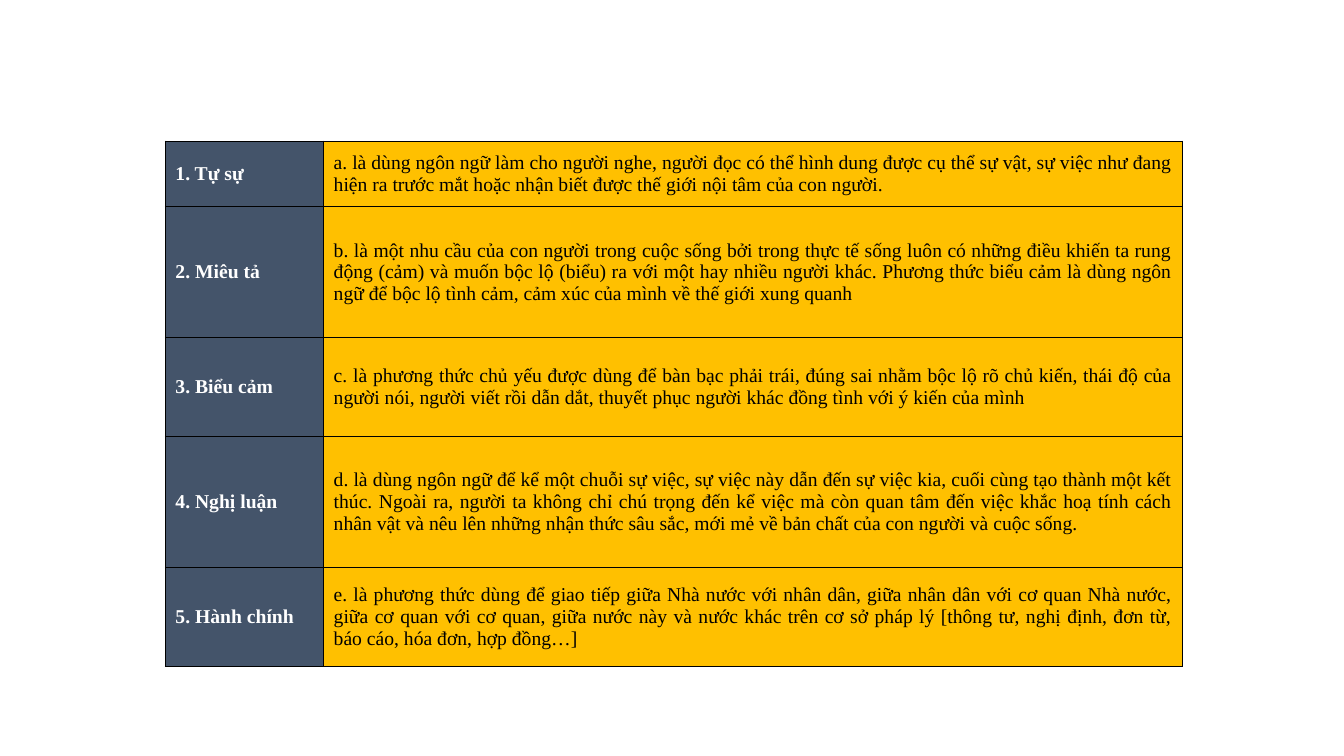
from lxml import etree
from pptx import Presentation
from pptx.dml.color import RGBColor
from pptx.enum.text import MSO_ANCHOR, PP_ALIGN
from pptx.oxml.ns import qn
from pptx.util import Inches, Pt

MIDDLE = MSO_ANCHOR.MIDDLE
LEFT, JUSTIFY = PP_ALIGN.LEFT, PP_ALIGN.JUSTIFY

# Mode of expression, definition, row height, space after the definition
MODES = [
    ("1. Tự sự",
     "a. là dùng ngôn ngữ làm cho người nghe, người đọc có thể hình dung được cụ thể sự vật, "
     "sự việc như đang hiện ra trước mắt hoặc nhận biết được thế giới nội tâm của con người.",
     0.65, 16),
    ("2. Miêu tả",
     "b. là một nhu cầu của con người trong cuộc sống bởi trong thực tế sống luôn có những điều "
     "khiến ta rung động (cảm) và muốn bộc lộ (biểu) ra với một hay nhiều người khác. "
     "Phương thức biểu cảm là dùng ngôn ngữ để bộc lộ tình cảm, cảm xúc của mình về thế giới "
     "xung quanh",
     1.3, 16),
    ("3. Biểu cảm",
     "c. là phương thức chủ yếu được dùng để bàn bạc phải trái, đúng sai nhằm bộc lộ rõ chủ kiến, "
     "thái độ của người nói, người viết rồi dẫn dắt, thuyết phục người khác đồng tình với "
     "ý kiến của mình",
     0.98, 16),
    ("4. Nghị luận",
     "d. là dùng ngôn ngữ để kể một chuỗi sự việc, sự việc này dẫn đến sự việc kia, cuối cùng "
     "tạo thành một kết thúc. Ngoài ra, người ta không chỉ chú trọng đến kể việc mà còn quan tâm "
     "đến việc khắc hoạ tính cách nhân vật và nêu lên những nhận thức sâu sắc, mới mẻ về bản chất "
     "của con người và cuộc sống.",
     1.3, 16),
    ("5. Hành chính",
     "e. là phương thức dùng để giao tiếp giữa Nhà nước với nhân dân, giữa nhân dân với cơ quan "
     "Nhà nước, giữa cơ quan với cơ quan, giữa nước này và nước khác trên cơ sở pháp lý "
     "[thông tư, nghị định, đơn từ, báo cáo, hóa đơn, hợp đồng…]",
     0.98, 0),
]

COLORS = {"slate": "44546A", "amber": "FFC000", "white": "FFFFFF", "black": "000000"}
TABLE_LEFT, TABLE_TOP = 1.64, 1.4
COLUMN_WIDTHS = (1.57, 8.52)
BORDER_WIDTH = Pt(0.75)
CELL_FORMAT = {
    "vertical_anchor": MIDDLE,
    "margin_left": Inches(0.1),
    "margin_right": Inches(0.1),
    "margin_top": 0,
    "margin_bottom": 0,
}
FONT_FORMAT = {"name": "Times New Roman", "size": Pt(14)}
MODE_STYLE = {"fill": "slate", "color": "white", "bold": True, "align": LEFT}
DEFINITION_STYLE = {"fill": "amber", "color": "black", "bold": False, "align": JUSTIFY}


def rgb(color):
    return RGBColor.from_string(COLORS[color])


def add_borders(cell):
    """Draw all four sides; the lines must precede the fill in the cell properties."""
    properties = cell._tc.get_or_add_tcPr()
    for position, side in enumerate(("a:lnL", "a:lnR", "a:lnT", "a:lnB")):
        line = etree.Element(qn(side), w=str(BORDER_WIDTH))
        fill = etree.SubElement(line, qn("a:solidFill"))
        etree.SubElement(fill, qn("a:srgbClr"), val=COLORS["black"])
        properties.insert(position, line)


def fill_cell(cell, text, style, space_after):
    for name, value in CELL_FORMAT.items():
        setattr(cell, name, value)
    cell.fill.solid()
    cell.fill.fore_color.rgb = rgb(style["fill"])
    add_borders(cell)
    paragraph = cell.text_frame.paragraphs[0]
    paragraph.alignment = style["align"]
    paragraph.space_after = Pt(space_after)
    run = paragraph.add_run()
    run.text = text
    for name, value in FONT_FORMAT.items():
        setattr(run.font, name, value)
    run.font.bold = style["bold"]
    run.font.color.rgb = rgb(style["color"])


def main():
    deck = Presentation()
    deck.slide_width, deck.slide_height = Inches(13.33), Inches(7.5)
    slide = deck.slides.add_slide(deck.slide_layouts[6])

    table_height = sum(height for _, _, height, _ in MODES)
    table = slide.shapes.add_table(
        len(MODES), len(COLUMN_WIDTHS), Inches(TABLE_LEFT), Inches(TABLE_TOP),
        Inches(sum(COLUMN_WIDTHS)), Inches(table_height)).table
    table.first_row = table.horz_banding = False
    for column, width in zip(table.columns, COLUMN_WIDTHS):
        column.width = Inches(width)

    for row, (mode, definition, height, space_after) in zip(table.rows, MODES):
        row.height = Inches(height)
        mode_cell, definition_cell = row.cells
        fill_cell(mode_cell, mode, MODE_STYLE, 0)
        fill_cell(definition_cell, definition, DEFINITION_STYLE, space_after)

    deck.save("out.pptx")


if __name__ == "__main__":
    main()
